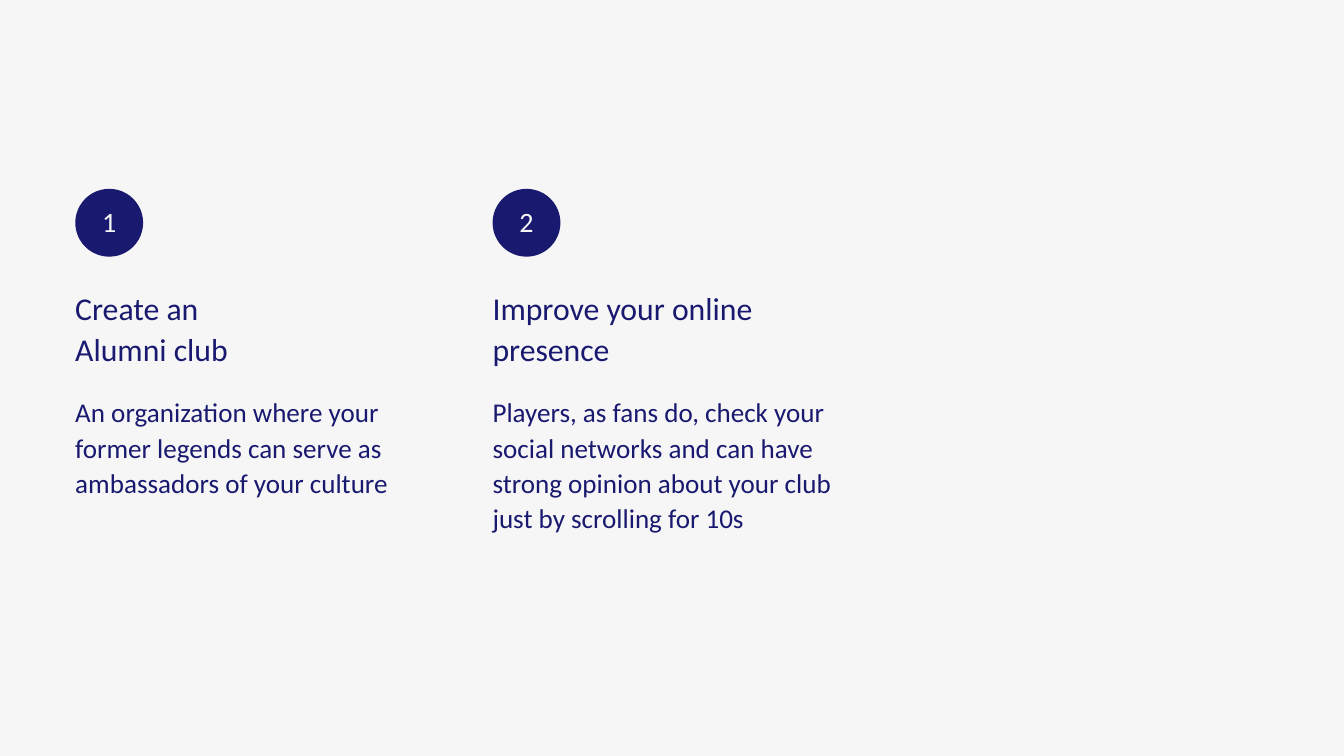
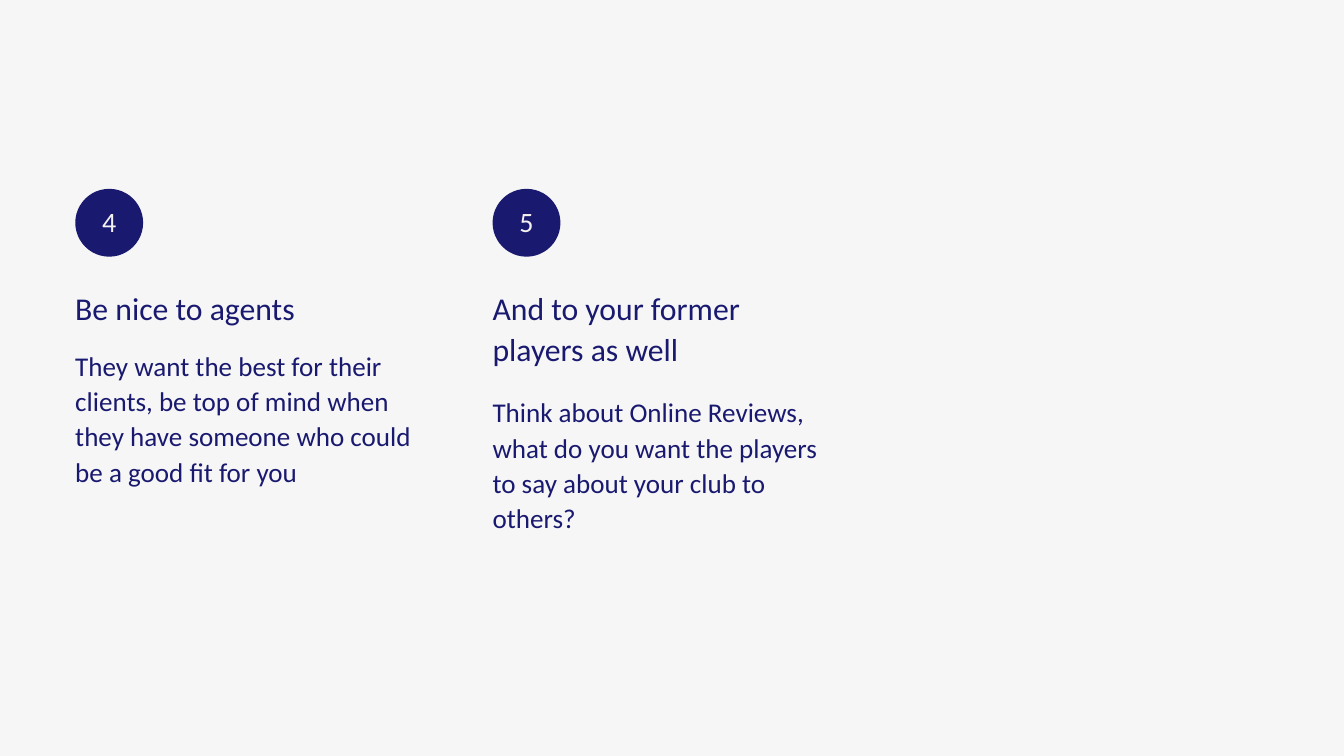
"""Build two slides of numbered advice for a sports club."""
from dataclasses import dataclass

from pptx import Presentation
from pptx.dml.color import RGBColor as RGB
from pptx.enum.shapes import MSO_SHAPE as SHAPE
from pptx.enum.text import MSO_ANCHOR as ANCHOR, PP_ALIGN as ALIGN
from pptx.util import Inches, Pt


@dataclass(frozen=True)
class Theme:
    """Colours, type sizes with line spacing, and grid lengths in inches."""
    font: str = "Calibri"
    navy: RGB = RGB(0x19, 0x19, 0x70)
    paper: RGB = RGB(0xF6, 0xF6, 0xF6)
    blush: RGB = RGB(0xF4, 0xF1, 0xF1)
    number: tuple = (30, 33)
    heading: tuple = (34, 44.2)
    body: tuple = (29, 37.7)
    left: float = 1.12
    pitch: float = 6.21
    widths: tuple = (5.34, 5.14)
    badge_top: float = 2.81
    badge_size: float = 1.01
    heading_top: float = 4.25
    heading_line: float = 0.6
    body_base: float = 4.47
    body_step: float = 0.69
    body_line: float = 0.52


T = Theme()

SLIDES = [
    (T.paper, [
        ("1", "Create an\nAlumni club", 2,
         "An organization where your former legends can serve as "
         "ambassadors of your culture", 4),
        ("2", "Improve your online presence", 2,
         "Players, as fans do, check your social networks and can have "
         "strong opinion about your club just by scrolling for 10s", 5),
    ]),
    (T.blush, [
        ("4", "Be nice to agents", 1,
         "They want the best for their clients, be top of mind when they "
         "have someone who could be a good fit for you", 5),
        ("5", "And to your former players as well", 2,
         "Think about Online Reviews, what do you want the players to say "
         "about your club to others?", 5),
    ]),
]


def write(tf, text, style, color, align=ALIGN.LEFT):
    """Fill a text frame without insets in one type style."""
    size, spacing = style
    tf.word_wrap = True
    tf.margin_left = tf.margin_right = tf.margin_top = tf.margin_bottom = 0
    tf.text = text
    for p in tf.paragraphs:
        p.alignment = align
        p.line_spacing = Pt(spacing)
        for r in p.runs:
            r.font.name = T.font
            r.font.size = Pt(size)
            r.font.color.rgb = color


def add_text(s, x, y, w, h, text, style):
    """Add a navy text box."""
    box = s.shapes.add_textbox(Inches(x), Inches(y), Inches(w), Inches(h))
    write(box.text_frame, text, style, T.navy)


def add_badge(s, x, number, color):
    """Add a numbered navy circle."""
    size = Inches(T.badge_size)
    sp = s.shapes.add_shape(SHAPE.OVAL, Inches(x), Inches(T.badge_top), size, size)
    sp.shadow.inherit = False
    sp.fill.solid()
    sp.fill.fore_color.rgb = T.navy
    sp.line.fill.background()
    write(sp.text_frame, number, T.number, color, ALIGN.CENTER)
    sp.text_frame.vertical_anchor = ANCHOR.MIDDLE


def add_tip(s, column, number_color, tip):
    """Add one column: badge, heading, and body below the heading's lines."""
    number, heading, heading_lines, body, body_lines = tip
    x = T.left + column * T.pitch
    w = T.widths[column]
    add_text(s, x, T.body_base + heading_lines * T.body_step, w,
             body_lines * T.body_line, body, T.body)
    add_text(s, x, T.heading_top, w, heading_lines * T.heading_line,
             heading, T.heading)
    add_badge(s, x, number, number_color)


def add_tips_slide(prs, number_color, tips):
    """Add a slide with one column per tip."""
    s = prs.slides.add_slide(prs.slide_layouts[6])
    s.background.fill.solid()
    s.background.fill.fore_color.rgb = T.paper
    for column, tip in enumerate(tips):
        add_tip(s, column, number_color, tip)


def main():
    """Build and save the slides."""
    prs = Presentation()
    prs.slide_width, prs.slide_height = Inches(20), Inches(11.25)
    for number_color, tips in SLIDES:
        add_tips_slide(prs, number_color, tips)
    prs.save("out.pptx")


if __name__ == "__main__":
    main()
